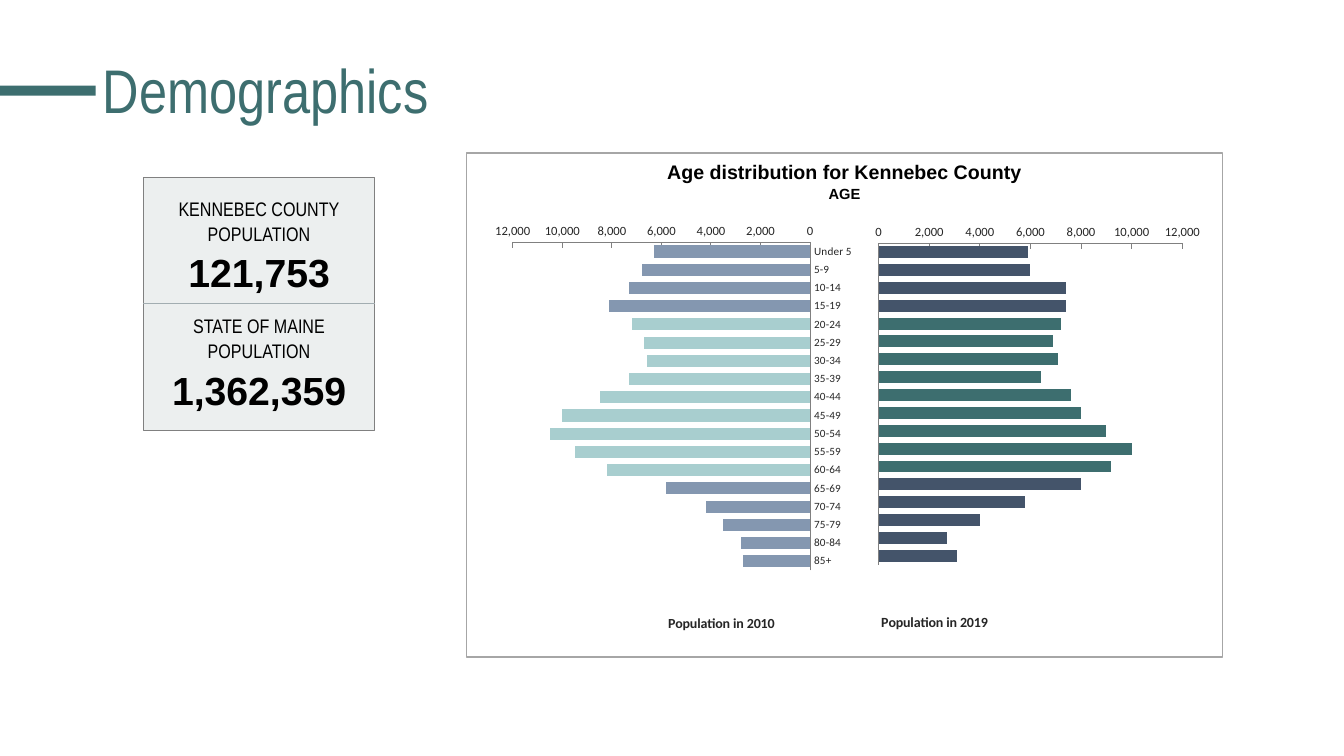
from lxml import etree
from pptx import Presentation
from pptx.chart.data import CategoryChartData
from pptx.dml.color import RGBColor
from pptx.enum import chart as ch, shapes, text
from pptx.oxml import parse_xml
from pptx.oxml.ns import nsdecls, qn
from pptx.util import Cm, Pt

TEAL = "3D6E6F"
GREY = "808080"
INK = "262626"
AGES = ["Under 5"] + [f"{n}-{n + 4}" for n in range(5, 85, 5)] + ["85+"]
WORK_AGES = range(4, 13)
POP_2010 = [6300, 6800, 7300, 8100, 7200, 6700, 6600, 7300, 8500,
            10000, 10500, 9500, 8200, 5800, 4200, 3500, 2800, 2700]
POP_2019 = [5900, 6000, 7400, 7400, 7200, 6900, 7100, 6400, 7600,
            8000, 9000, 10000, 9200, 8000, 5800, 4000, 2700, 3100]


def rgb(code):
    return RGBColor.from_string(code)


def paint(item, code):
    item.fill.solid()
    item.fill.fore_color.rgb = rgb(code)


def stroke(line, code, width):
    line.color.rgb = rgb(code)
    line.width = Pt(width)


def style(font, face, size, code, bold=False):
    font.name = face
    font.size = Pt(size)
    font.bold = bold
    font.color.rgb = rgb(code)


def add_box(slide, place, fill=None, edge=None, width=1):
    box = slide.shapes.add_shape(shapes.MSO_SHAPE.RECTANGLE, *map(Cm, place))
    box.shadow.inherit = False
    if fill:
        paint(box, fill)
    else:
        box.fill.background()
    if edge:
        stroke(box.line, edge, width)
    else:
        box.line.fill.background()
    return box


def add_lines(box, rows, anchor, inset=None):
    frame = box.text_frame
    frame.word_wrap = True
    frame.vertical_anchor = anchor
    if inset is not None:
        frame.margin_left = frame.margin_right = Cm(inset)
        frame.margin_top = frame.margin_bottom = Cm(inset)
    frame.text = "\n".join(row[0] for row in rows)
    for para, (_, face, size, bold, before) in zip(frame.paragraphs, rows):
        para.alignment = text.PP_ALIGN.CENTER
        para.line_spacing = 1.07
        if before:
            para.space_before = Pt(before)
        style(para.runs[0].font, face, size, "000000", bold)


def add_title(slide, words):
    title = slide.shapes.title
    title.left, title.top, title.width, title.height = map(
        Cm, (2.34, 0.51, 29.21, 3.68))
    frame = title.text_frame
    frame.text = words
    frame.vertical_anchor = text.MSO_ANCHOR.MIDDLE
    para = frame.paragraphs[0]
    para.alignment = text.PP_ALIGN.LEFT
    para.line_spacing = 0.9
    style(para.runs[0].font, "Arial Narrow", 44, TEAL)


def add_rule(slide, start, end, code, width):
    rule = slide.shapes.add_connector(
        shapes.MSO_CONNECTOR.STRAIGHT, *map(Cm, start + end))
    stroke(rule.line, code, width)
    etree.SubElement(rule._element.spPr, qn("a:effectLst"))


def set_layout(node, after, **spots):
    for old in node.findall(qn("c:layout")):
        node.remove(old)
    parts = "".join(f'<c:{key} val="{val}"/>' for key, val in spots.items())
    layout = parse_xml(f'<c:layout {nsdecls("c")}><c:manualLayout>{parts}'
                       '</c:manualLayout></c:layout>')
    if after is None:
        node.insert(0, layout)
    else:
        after.addnext(layout)


def set_axis(axis, size, code):
    axis.has_major_gridlines = False
    axis.minor_tick_mark = ch.XL_TICK_MARK.NONE
    axis.major_tick_mark = ch.XL_TICK_MARK.NONE
    style(axis.tick_labels.font, "Calibri", size, code)
    stroke(axis.format.line, GREY, 0.75)


def add_chart(slide, place, vals, hues, name, left, plot, flip):
    data = CategoryChartData(number_format="#,##0")
    data.categories = AGES
    data.add_series("Series 1", vals)
    chart = slide.shapes.add_chart(
        ch.XL_CHART_TYPE.BAR_CLUSTERED, *map(Cm, place), data).chart
    style(chart.font, "Calibri", 10, "000000")
    chart.has_legend = False
    chart.has_title = False
    space = chart._chartSpace
    space.find(qn("c:chart")).addnext(parse_xml(
        f'<c:spPr {nsdecls("c", "a")}><a:noFill/><a:ln><a:noFill/></a:ln></c:spPr>'))

    bars = chart.plots[0]
    bars.gap_width = 50
    bars.vary_by_categories = False
    base, work = hues
    series = bars.series[0]
    paint(series.format, base)
    for spot in WORK_AGES:
        paint(series.points[spot].format, work)

    cats = chart.category_axis
    set_axis(cats, 8, INK)
    cats.reverse_order = True
    cats.crosses = ch.XL_AXIS_CROSSES.MAXIMUM
    if not flip:
        cats.tick_label_position = ch.XL_TICK_LABEL_POSITION.NONE

    scale = chart.value_axis
    set_axis(scale, 9, INK)
    scale.reverse_order = flip
    scale.major_tick_mark = ch.XL_TICK_MARK.INSIDE
    scale.minimum_scale, scale.maximum_scale, scale.major_unit = 0, 12000, 2000
    scale.tick_labels.number_format = "#,##0"
    scale.tick_labels.number_format_is_linked = False
    label = scale.axis_title
    label.text_frame.text = name
    style(label.text_frame.paragraphs[0].runs[0].font, "Calibri", 10, INK, True)
    node = label._element
    set_layout(node, node.find(qn("c:tx")),
               xMode="edge", yMode="edge", x=left, y=0.94)

    x, y, w, h = plot
    set_layout(space.find(".//" + qn("c:plotArea")), None, layoutTarget="inner",
               xMode="edge", yMode="edge", x=x, y=y, w=w, h=h)


def main():
    deck = Presentation()
    deck.slide_width, deck.slide_height = Cm(33.87), Cm(19.05)
    slide = deck.slides.add_slide(deck.slide_layouts[5])
    add_box(slide, (0, 2.16, 2.41, 0.25), TEAL)
    add_title(slide, "Demographics")

    people = add_box(slide, (3.61, 4.47, 5.84, 6.38), "ECEFEF", GREY, 0.75)
    add_lines(people, [
        ("KENNEBEC COUNTY", "Arial Narrow", 14, False, 0),
        ("POPULATION", "Arial Narrow", 14, False, 0),
        ("121,753", "Arial", 28, True, 0),
        ("STATE OF MAINE", "Arial Narrow", 14, False, 12),
        ("POPULATION", "Arial Narrow", 14, False, 0),
        ("1,362,359", "Arial", 28, True, 0),
    ], text.MSO_ANCHOR.MIDDLE, 0)

    panel = add_box(slide, (11.76, 3.86, 19.05, 12.7), None, "A6A6A6")
    add_lines(panel, [
        ("Age distribution for Kennebec County", "Arial", 14, True, 0),
        ("AGE", "Arial", 10.5, True, 0),
    ], text.MSO_ANCHOR.TOP)

    add_rule(slide, (3.61, 7.65), (9.45, 7.65), "A2ADB1", 0.5)
    add_chart(slide, (21.59, 5.61, 9.22, 10.39), POP_2019, ("44546A", TEAL),
              "Population in 2019", 0.06, (0.06, 0.05, 0.83, 0.78), False)
    add_chart(slide, (12.01, 5.64, 10.13, 10.39), POP_2010, ("8497B0", "A8CECF"),
              "Population in 2010", 0.47, (0.09, 0.04, 0.74, 0.8), True)
    deck.save("out.pptx")


if __name__ == "__main__":
    main()
